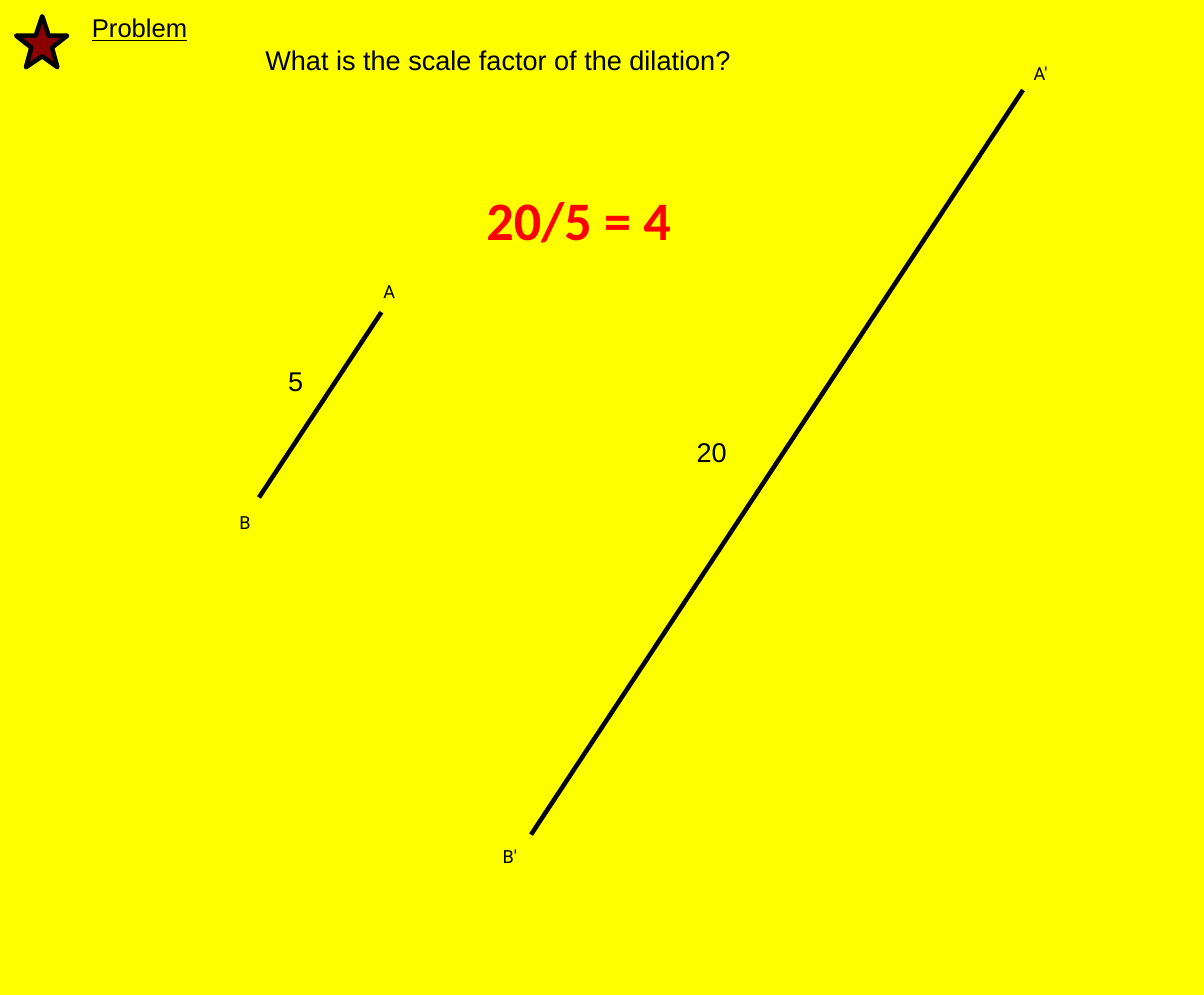
from lxml import etree
from pptx import Presentation
from pptx import util as u
from pptx.dml.color import RGBColor
from pptx.enum import shapes, text
from pptx.oxml import ns

PX = 9144  # 100 px to the inch
YELLOW = RGBColor(0xFF, 0xFF, 0x00)
BLACK = RGBColor(0x00, 0x00, 0x00)
RED = RGBColor(0xFF, 0x00, 0x00)
DARK_RED = RGBColor(0x8B, 0x00, 0x00)

deck = Presentation()
deck.slide_width, deck.slide_height = 1111 * PX, 918 * PX
page = deck.slides.add_slide(deck.slide_layouts[6])
page.background.fill.solid()
page.background.fill.fore_color.rgb = YELLOW


def add_label(words, left, top, width, height, font, size, color=BLACK):
    box = page.shapes.add_textbox(left * PX, top * PX, width * PX, height * PX)
    box.text_frame.word_wrap = True
    box.text_frame.auto_size = text.MSO_AUTO_SIZE.SHAPE_TO_FIT_TEXT
    box.text_frame.text = words
    span = box.text_frame.paragraphs[0].runs[0]
    span.font.name, span.font.size = font, u.Pt(size)
    span.font.color.rgb = color
    return span


title = add_label("Problem", 75, 6, 167, 39, "Arial", 17)
title.font.underline = True

star_points = [(39, 15), (45, 33), (62, 33), (48, 44), (53, 62),
               (39, 52), (24, 62), (29, 44), (15, 33), (33, 33)]
outline = page.shapes.build_freeform(*star_points[0], scale=PX)
outline.add_line_segments(star_points[1:], close=True)
star = outline.convert_to_shape()
star.shadow.inherit = False
star.fill.solid()
star.fill.fore_color.rgb = DARK_RED
star.line.color.rgb = BLACK
star.line.width = u.Pt(3)

segments = [(239, 459, 352, 288), (490, 770, 944, 83)]
for ends in segments:
    segment = page.shapes.add_connector(
        shapes.MSO_CONNECTOR.STRAIGHT, *[end * PX for end in ends])
    segment.line.color.rgb = BLACK
    segment.line.width = u.Pt(3)
    etree.SubElement(segment._element.spPr, ns.qn("a:effectLst"))

endpoints = [("A", 344, 254, 29), ("B", 211, 467, 29),
             ("A'", 944, 53, 53), ("B'", 454, 775, 68)]
for name, left, top, width in endpoints:
    add_label(name, left, top, width, 30, "Roboto", 12)

lengths_and_question = [
    ("5", 256, 331, 33),
    ("20", 633, 397, 52),
    ("What is the scale factor of the dilation?", 235, 35, 605),
]
for words, left, top, width in lengths_and_question:
    add_label(words, left, top, width, 40, "Arial", 18)

answer = add_label("20/5 = 4", 439, 167, 194, 71, "Calibri", 36, RED)
answer.font.bold = True

deck.save("out.pptx")
